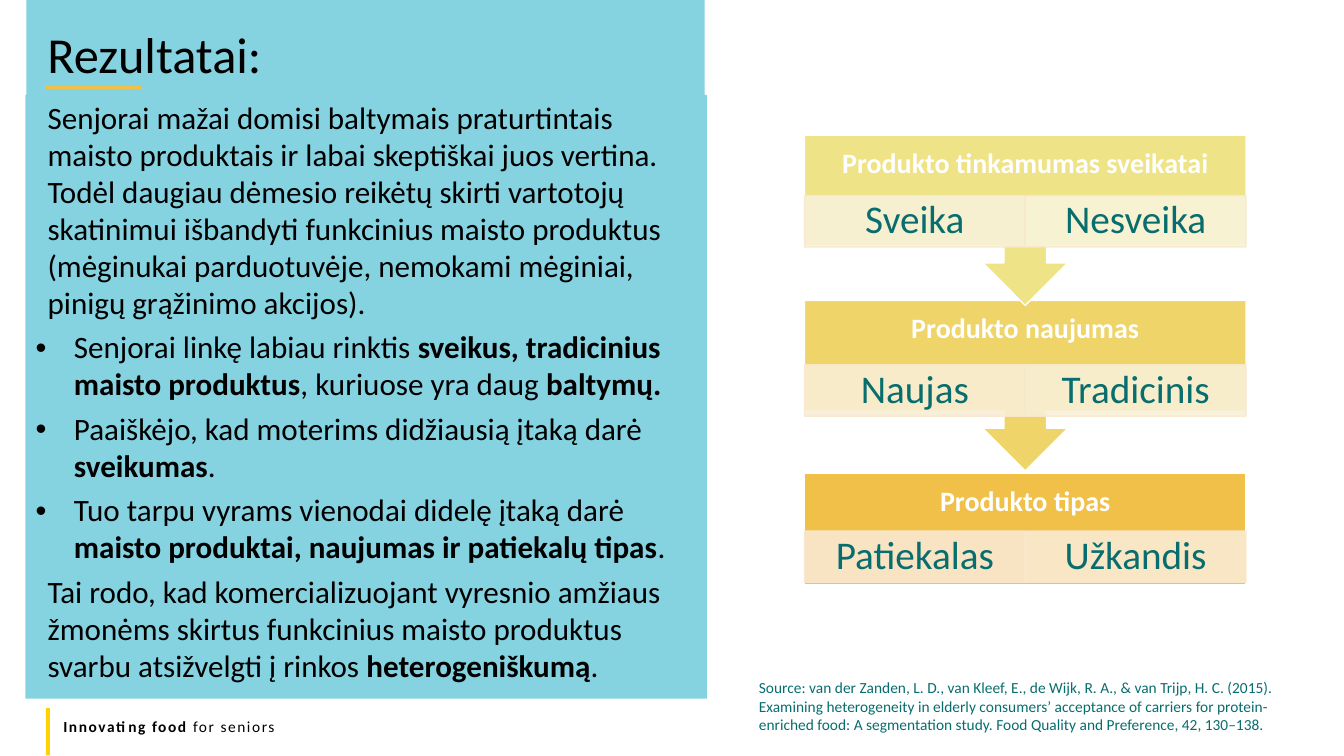
"""Builds the results slide with a three-step product choice diagram."""
from lxml import etree
from pptx import Presentation
from pptx.dml.color import RGBColor
from pptx.enum.shapes import MSO_CONNECTOR, MSO_SHAPE
from pptx.enum.text import MSO_ANCHOR, MSO_AUTO_SIZE, PP_ALIGN
from pptx.oxml.ns import qn
from pptx.util import Pt

RECT, CALLOUT = MSO_SHAPE.RECTANGLE, MSO_SHAPE.DOWN_ARROW_CALLOUT
TOP, MIDDLE = MSO_ANCHOR.TOP, MSO_ANCHOR.MIDDLE
LEFT, CENTER = PP_ALIGN.LEFT, PP_ALIGN.CENTER

COLORS = {
    "panel": "85D2E1", "black": "000000", "white": "FFFFFF",
    "teal": "086D6E", "gold": "F0C049", "bar": "FFD100", "edge": "F9E8D0",
}

TITLE = "Rezultatai:"
# Runs alternate between plain and bold.
BODY = [
    (False, ["Senjorai mažai domisi baltymais praturtintais maisto produktais ir labai "
             "skeptiškai juos vertina. Todėl daugiau dėmesio reikėtų skirti vartotojų "
             "skatinimui išbandyti funkcinius maisto produktus (mėginukai parduotuvėje, "
             "nemokami mėginiai, pinigų grąžinimo akcijos)."]),
    (True, ["Senjorai linkę labiau rinktis ", "sveikus, tradicinius maisto produktus",
            ", kuriuose yra daug ", "baltymų."]),
    (True, ["Paaiškėjo, kad moterims didžiausią įtaką darė ", "sveikumas", "."]),
    (True, ["Tuo tarpu vyrams vienodai didelę įtaką darė ",
            "maisto produktai, naujumas ir patiekalų tipas", "."]),
    (False, ["Tai rodo, kad komercializuojant vyresnio amžiaus žmonėms skirtus funkcinius "
             "maisto produktus svarbu atsižvelgti į rinkos ", "heterogeniškumą", "."]),
]
STEPS = [
    {"head": "Produkto tinkamumas sveikatai", "top": 96.5, "row": 139.7, "kind": CALLOUT,
     "fill": "EEE387", "cells": [("Sveika", "F8F2D8"), ("Nesveika", "F8F4DA")]},
    {"head": "Produkto naujumas", "top": 214.6, "row": 260.6, "kind": CALLOUT,
     "fill": "EED469", "cells": [("Naujas", "F9EED4"), ("Tradicinis", "F9F0D6")]},
    {"head": "Produkto tipas", "top": 338.4, "row": 379.4, "kind": RECT,
     "fill": "F0C049", "cells": [("Patiekalas", "F9E8D0"), ("Užkandis", "F9EBD2")]},
]
FOOTER = ["Innovating food ", "for seniors"]
SOURCE = ("Source: van der Zanden, L. D., van Kleef, E., de Wijk, R. A., & van Trijp, H. C. "
          "(2015). Examining heterogeneity in elderly consumers’ acceptance of carriers for "
          "protein-enriched food: A segmentation study. Food Quality and Preference, 42, "
          "130–138.")

STEP_X, STEP_W, CELL_H = 574.6, 315.4, 36.7
HEIGHTS = {CALLOUT: 121.7, RECT: 79.2}


def rgb(hue):
    return RGBColor.from_string(COLORS.get(hue, hue))


def place(item, left, top, wide, high):
    item.left, item.top, item.width, item.height = map(Pt, (left, top, wide, high))


def write(frame, paras, size=11, color="black", bold=False, align=LEFT, anchor=TOP,
          inset=(7.2, 3.6), lead=None, gap=0, track=0):
    frame.word_wrap = True
    frame.auto_size = MSO_AUTO_SIZE.NONE
    frame.vertical_anchor = anchor
    frame.margin_left = frame.margin_right = Pt(inset[0])
    frame.margin_top = frame.margin_bottom = Pt(inset[1])
    for num, (dot, runs) in enumerate(paras):
        para = frame.add_paragraph() if num else frame.paragraphs[0]
        para.alignment = align
        para.space_before = Pt(gap if num else 0)
        para.line_spacing = lead
        if len(paras) > 1:
            props = para._p.get_or_add_pPr()
            props.set("marL", str(Pt(27.4 if dot else 8.6)))
            props.set("indent", str(Pt(-27.4 if dot else 0)))
            if dot:
                etree.SubElement(props, qn("a:buFont")).set("typeface", "Arial")
                etree.SubElement(props, qn("a:buChar")).set("char", "•")
            else:
                etree.SubElement(props, qn("a:buNone"))
        for spot, text in enumerate(runs):
            run = para.add_run()
            run.text = text
            run.font.name, run.font.size = "Calibri", Pt(size)
            run.font.bold = bold != (spot % 2 == 1)
            run.font.color.rgb = rgb(color)
            if track:
                run._r.get_or_add_rPr().set("spc", str(track))


def block(slide, kind, box, fill, line=None, alpha=None):
    item = slide.shapes.add_shape(kind, *map(Pt, box))
    item.shadow.inherit = False
    item.fill.solid()
    item.fill.fore_color.rgb = rgb(fill)
    if line:
        item.line.color.rgb = rgb(line)
        item.line.width = Pt(1)
    else:
        item.line.fill.background()
    if alpha:
        for tint in item.element.spPr.iter(qn("a:srgbClr")):
            etree.SubElement(tint, qn("a:alpha")).set("val", str(alpha * 1000))
    return item


def label(slide, box, runs, **style):
    item = slide.shapes.add_textbox(*map(Pt, box))
    write(item.text_frame, [(False, runs)], **style)


def draw_step(slide, step):
    box = (STEP_X, step["top"], STEP_W, HEIGHTS[step["kind"]])
    head = block(slide, step["kind"], box, step["fill"], "white")
    write(head.text_frame, [(False, [step["head"]])], size=20, color="white", bold=True,
          align=CENTER, inset=(11.5, 10), lead=0.9)
    wide = STEP_W / len(step["cells"])
    for col, (text, fill) in enumerate(step["cells"]):
        box = (STEP_X + col * wide, step["row"], wide, CELL_H)
        cell = block(slide, RECT, box, fill, "edge", 90)
        write(cell.text_frame, [(False, [text])], size=28, color="teal", align=CENTER,
              anchor=MIDDLE, inset=(15.8, 2.9), lead=0.9)


def main():
    deck = Presentation()
    deck.slide_width, deck.slide_height = Pt(960), Pt(540)
    slide = deck.slides.add_slide(deck.slide_layouts[1])
    title, body = slide.shapes.title, slide.placeholders[1]

    panel = block(slide, RECT, (18.9, 0, 484.4, 466.4), "panel")
    title.element.addprevious(panel.element)
    place(title, 26.6, 21.6, 400.3, 46.1)
    write(title.text_frame, [(False, [TITLE])], size=36, lead=0.8)
    place(body, 18.2, 67.7, 486.7, 431.3)
    body.fill.solid()
    body.fill.fore_color.rgb = rgb("panel")
    write(body.text_frame, BODY, size=22.2, lead=0.99, gap=5.5)

    block(slide, RECT, (32.8, 505.8, 2.9, 33.8), "bar")
    label(slide, (38.2, 509, 864, 20.9), FOOTER[:1] + FOOTER[1:], bold=True, track=110)
    for step in reversed(STEPS):
        draw_step(slide, step)
    label(slide, (535, 481, 412.6, 47.5), [SOURCE], color="teal")

    rule = slide.shapes.add_connector(MSO_CONNECTOR.STRAIGHT, Pt(33.1), Pt(62.6),
                                      Pt(100.8), Pt(62.6))
    rule.line.color.rgb = rgb("gold")
    rule.line.width = Pt(2.25)
    etree.SubElement(rule.element.spPr, qn("a:effectLst"))
    deck.save("out.pptx")


if __name__ == "__main__":
    main()
